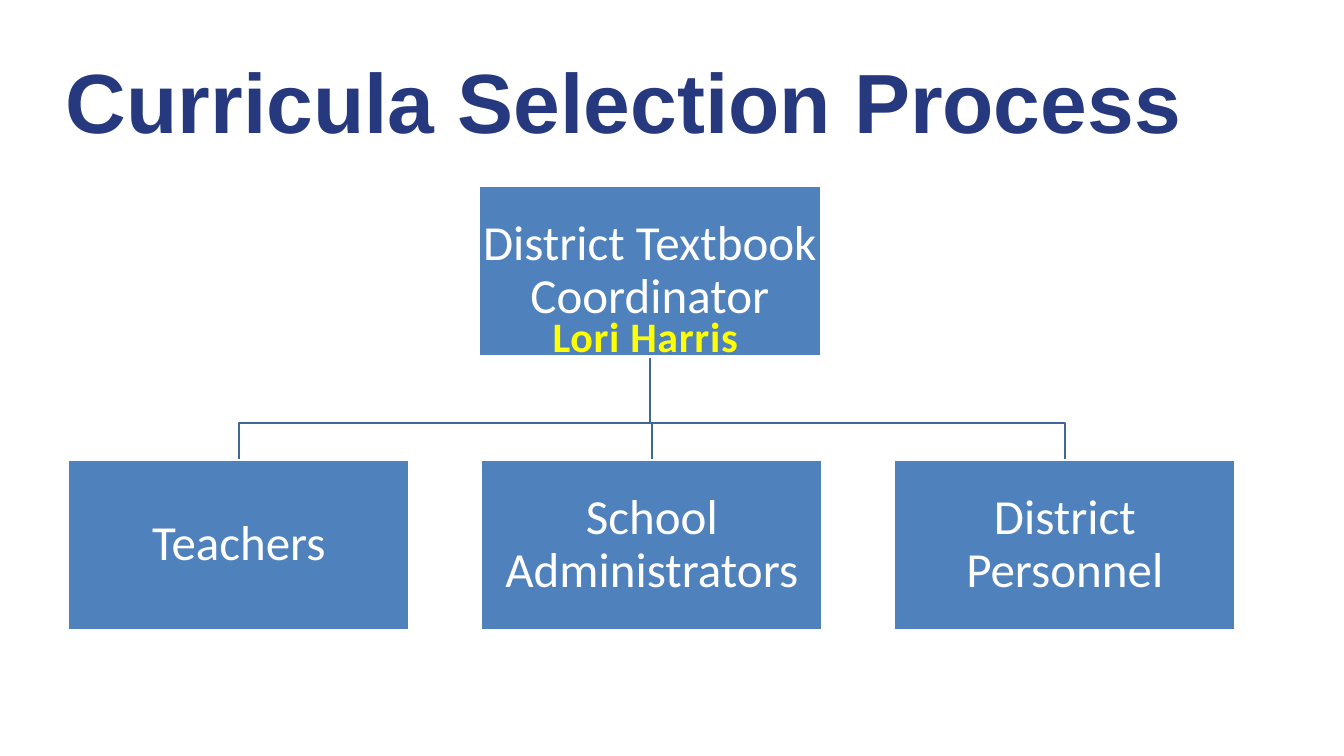
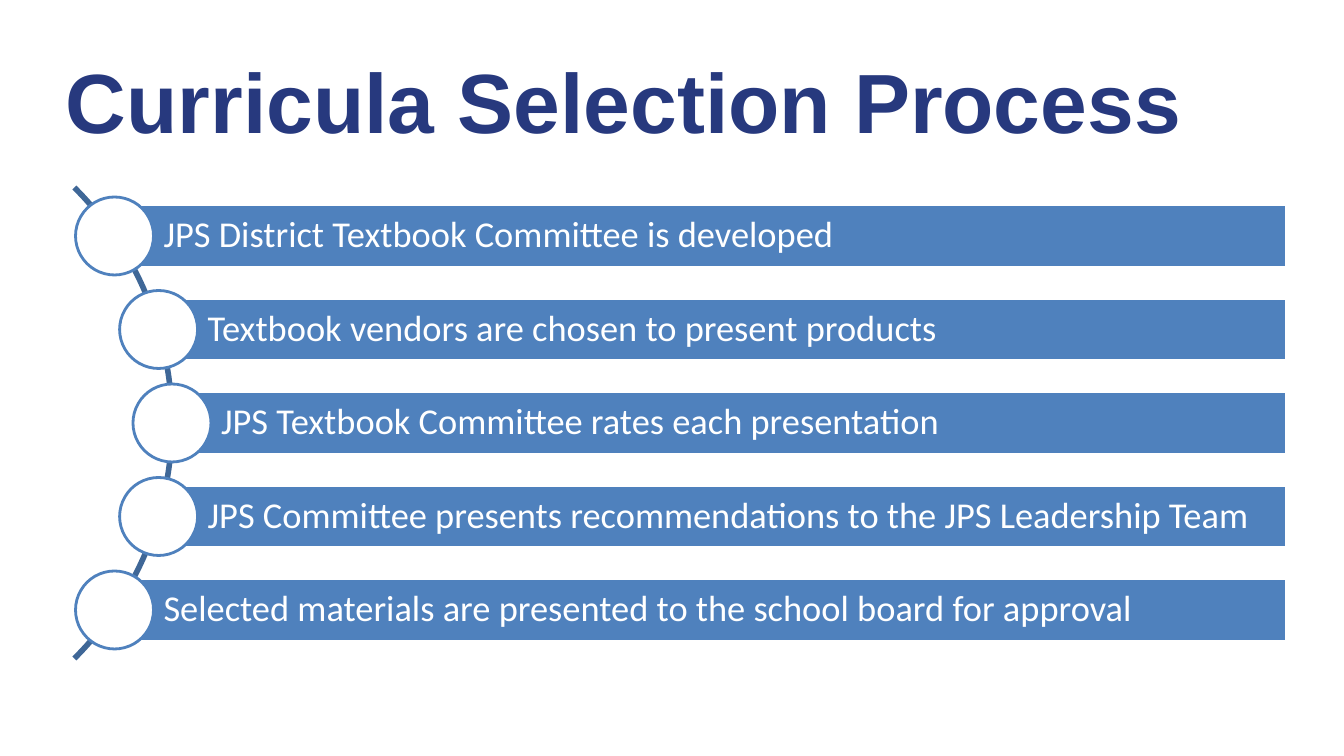
from dataclasses import dataclass
from math import cos, radians, sin, sqrt

from lxml.etree import SubElement
from pptx import Presentation
from pptx.dml.color import RGBColor
from pptx.enum.shapes import MSO_SHAPE
from pptx.enum.text import MSO_ANCHOR, PP_ALIGN
from pptx.oxml.ns import qn
from pptx.util import Pt

TITLE = "Curricula Selection Process"
COORDINATOR = "District Textbook Coordinator"
COORDINATOR_NAME = "Lori Harris"
GROUPS = ["Teachers", "School Administrators", "District Personnel"]
STEPS = [
    "JPS District Textbook Committee is developed",
    "Textbook vendors are chosen to present products",
    "JPS Textbook Committee rates each presentation",
    "JPS Committee presents recommendations to the JPS Leadership Team",
    "Selected materials are presented to the school board for approval",
]


@dataclass(frozen=True)
class Theme:
    navy: str = "27397E"
    blue: str = "4F81BD"
    dark_blue: str = "3F6797"
    white: str = "FFFFFF"
    yellow: str = "FFFF00"
    title_font: str = "Arial"
    body_font: str = "Calibri"
    title_size: int = 60
    box_size: int = 35
    name_size: int = 30
    step_size: int = 26
    line_width: int = 2
    arc_width: int = 4
    name_outline: float = 0.75


THEME = Theme()
EMU_PER_PX = 914400 / 100.8
SLIDE_SIZE = (1344, 756)

TITLE_BOX = (66, 50, 1220, 97)
BOX_WIDTH, BOX_HEIGHT = 342, 170
COORDINATOR_LEFT, COORDINATOR_TOP = 479, 186
GROUP_LEFT, GROUP_TOP, GROUP_PITCH = 68, 460, 413
BRANCH_TOP, BRANCH_MIDDLE = 358, 423
NAME_BOX = (528, 305, 235, 61)

ARC_X, ARC_Y, ARC_RADIUS = -161, 423, 333
FIRST_STEP_Y, LAST_STEP_Y = 236, 610
BAR_RIGHT, BAR_HEIGHT, CIRCLE_SIZE = 1286, 62, 78


def px(value):
    return round(value * EMU_PER_PX)


def color(value):
    return RGBColor.from_string(value)


def set_line(shape, line_color, width=THEME.line_width):
    shape.line.color.rgb = color(line_color)
    shape.line.width = Pt(width)


def add_preset(slide, kind, box, fill, line_color):
    shape = slide.shapes.add_shape(kind, *map(px, box))
    shape.shadow.inherit = False
    shape.fill.solid()
    shape.fill.fore_color.rgb = color(fill)
    set_line(shape, line_color)
    return shape


def add_path(slide, points, width=THEME.line_width):
    """Draw an open, unfilled line through points given in px."""
    start, *rest = [(px(x), px(y)) for x, y in points]
    builder = slide.shapes.build_freeform(*start)
    builder.add_line_segments(rest, close=False)
    shape = builder.convert_to_shape()
    shape.shadow.inherit = False
    shape.fill.background()
    set_line(shape, THEME.dark_blue, width)


def set_text(shape, text, font, size, text_color, insets=(0, 0, 0, 0),
             align=PP_ALIGN.LEFT, anchor=MSO_ANCHOR.TOP, bold=False, spacing=1.0):
    frame = shape.text_frame
    frame.word_wrap = True
    frame.vertical_anchor = anchor
    (frame.margin_left, frame.margin_top,
     frame.margin_right, frame.margin_bottom) = map(px, insets)
    frame.text = text
    paragraph = frame.paragraphs[0]
    paragraph.alignment = align
    paragraph.line_spacing = spacing
    run = paragraph.runs[0]
    run.font.name = font
    run.font.size = Pt(size)
    run.font.bold = bold
    run.font.color.rgb = color(text_color)
    return run


def add_label_bar(slide, box, text, size, insets, align):
    bar = add_preset(slide, MSO_SHAPE.RECTANGLE, box, THEME.blue, THEME.white)
    set_text(bar, text, THEME.body_font, size, THEME.white, insets, align,
             MSO_ANCHOR.MIDDLE, spacing=0.9)


def add_titled_slide(presentation):
    slide = presentation.slides.add_slide(presentation.slide_layouts[6])
    title = slide.shapes.add_textbox(*map(px, TITLE_BOX))
    set_text(title, TITLE, THEME.title_font, THEME.title_size, THEME.navy, bold=True)
    return slide


def outline_run(run):
    """Give the letters a thin outline and slightly wider spacing."""
    properties = run.font._element
    properties.set("spc", "50")
    line = SubElement(properties, qn("a:ln"), w=str(Pt(THEME.name_outline)))
    fill = SubElement(line, qn("a:solidFill"))
    SubElement(fill, qn("a:srgbClr"), val=THEME.blue)
    properties.insert(0, line)


def add_organization_slide(presentation):
    slide = add_titled_slide(presentation)
    parent_x = COORDINATOR_LEFT + BOX_WIDTH / 2
    boxes = [(COORDINATOR, COORDINATOR_LEFT, COORDINATOR_TOP)]
    for index, group in enumerate(GROUPS):
        left = GROUP_LEFT + index * GROUP_PITCH
        boxes.append((group, left, GROUP_TOP))
        child_x = left + BOX_WIDTH / 2
        add_path(slide, [(parent_x, BRANCH_TOP), (parent_x, BRANCH_MIDDLE),
                         (child_x, BRANCH_MIDDLE), (child_x, GROUP_TOP)])
    for text, left, top in boxes:
        add_label_bar(slide, (left, top, BOX_WIDTH, BOX_HEIGHT), text,
                      THEME.box_size, (2, 2, 2, 2), PP_ALIGN.CENTER)
    name = slide.shapes.add_textbox(*map(px, NAME_BOX))
    outline_run(set_text(name, COORDINATOR_NAME, THEME.body_font, THEME.name_size,
                         THEME.yellow, (10, 5, 10, 5), PP_ALIGN.CENTER, bold=True))


def add_steps_slide(presentation):
    slide = add_titled_slide(presentation)
    angles = [radians(degree) for degree in range(-45, 46)]
    add_path(slide, [(ARC_X + ARC_RADIUS * cos(angle), ARC_Y + ARC_RADIUS * sin(angle))
                     for angle in angles], THEME.arc_width)
    pitch = (LAST_STEP_Y - FIRST_STEP_Y) / (len(STEPS) - 1)
    for index, step in enumerate(STEPS):
        y = FIRST_STEP_Y + index * pitch
        x = ARC_X + sqrt(ARC_RADIUS ** 2 - (y - ARC_Y) ** 2)
        add_label_bar(slide, (x, y - BAR_HEIGHT / 2, BAR_RIGHT - x, BAR_HEIGHT), step,
                      THEME.step_size, (49, 7, 7, 7), PP_ALIGN.LEFT)
        circle = (x - CIRCLE_SIZE / 2, y - CIRCLE_SIZE / 2, CIRCLE_SIZE, CIRCLE_SIZE)
        add_preset(slide, MSO_SHAPE.OVAL, circle, THEME.white, THEME.blue)


def main():
    presentation = Presentation()
    presentation.slide_width, presentation.slide_height = map(px, SLIDE_SIZE)
    add_organization_slide(presentation)
    add_steps_slide(presentation)
    presentation.save("out.pptx")


if __name__ == "__main__":
    main()
